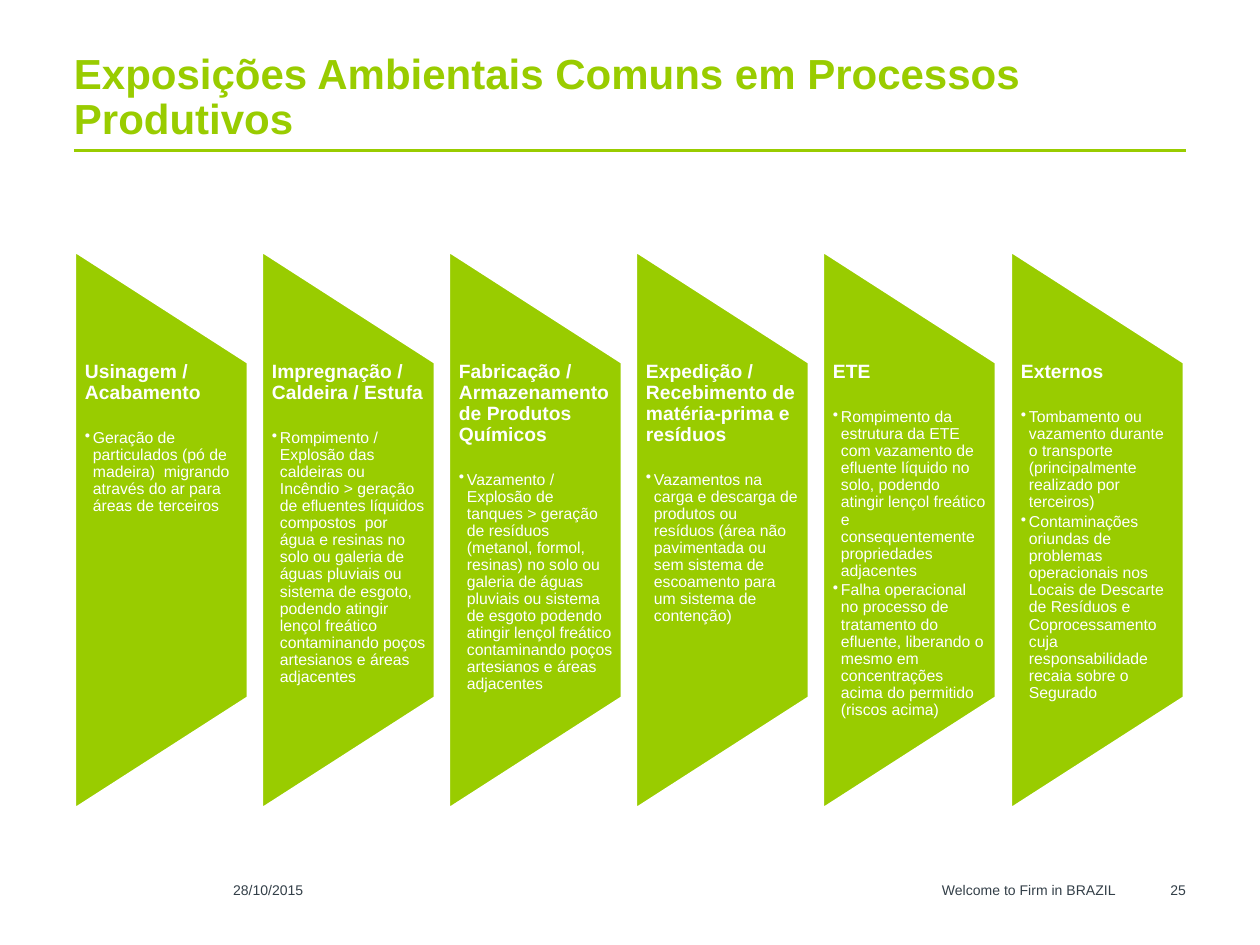
from dataclasses import dataclass

import lxml.etree
import pptx
import pptx.dml.color
import pptx.enum.shapes
import pptx.enum.text
import pptx.oxml.ns
import pptx.util

EMU_PER_PX = 914400 // 126
FONT = "Arial"
GREEN, WHITE, SLATE = "99CC00", "FFFFFF", "333F48"
LEFT, RIGHT = pptx.enum.text.PP_ALIGN.LEFT, pptx.enum.text.PP_ALIGN.RIGHT
TOP, BOTTOM = pptx.enum.text.MSO_ANCHOR.TOP, pptx.enum.text.MSO_ANCHOR.BOTTOM

MARGIN, CONTENT_WIDTH = 74, 1112
BAND_WIDTH, BAND_HEIGHT, BAND_MIDDLE = 174, 559, 530
BODY_TOP, BODY_HEIGHT, BODY_INSET = 362, 336, 10
BULLET_INDENT = 8


@dataclass(frozen=True)
class Box:
    left: int
    top: int
    width: int
    height: int


@dataclass(frozen=True)
class Process:
    heading: str
    exposures: tuple[str, ...]


@dataclass(frozen=True)
class FooterItem:
    text: str
    box: Box
    align: pptx.enum.text.PP_ALIGN


PROCESSES = (
    Process("Usinagem / Acabamento", (
        "Geração de particulados (pó de madeira)  migrando através do ar para áreas de terceiros",
    )),
    Process("Impregnação / Caldeira / Estufa", (
        "Rompimento / Explosão das caldeiras ou Incêndio > geração de efluentes líquidos "
        "compostos  por água e resinas no solo ou galeria de águas pluviais ou sistema de "
        "esgoto, podendo atingir lençol freático contaminando poços artesianos e áreas adjacentes",
    )),
    Process("Fabricação / Armazenamento de Produtos Químicos", (
        "Vazamento / Explosão de tanques > geração de resíduos (metanol, formol, resinas) no "
        "solo ou galeria de águas pluviais ou sistema de esgoto podendo atingir lençol freático "
        "contaminando poços artesianos e áreas adjacentes",
    )),
    Process("Expedição / Recebimento de matéria-prima e resíduos", (
        "Vazamentos na carga e descarga de produtos ou resíduos (área não pavimentada ou sem "
        "sistema de escoamento para um sistema de contenção)",
    )),
    Process("ETE", (
        "Rompimento da estrutura da ETE com vazamento de efluente líquido no solo, podendo "
        "atingir lençol freático e consequentemente propriedades adjacentes",
        "Falha operacional no processo de tratamento do efluente, liberando o mesmo em "
        "concentrações acima do permitido (riscos acima)",
    )),
    Process("Externos", (
        "Tombamento ou vazamento durante o transporte (principalmente realizado por terceiros)",
        "Contaminações oriundas de problemas operacionais nos Locais de Descarte de Resíduos e "
        "Coprocessamento cuja responsabilidade recaia sobre o Segurado",
    )),
)

FOOTER = (
    FooterItem("28/10/2015", Box(233, 882, 198, 25), LEFT),
    FooterItem("Welcome to Firm in BRAZIL", Box(471, 882, 645, 25), RIGHT),
    FooterItem("25", Box(1152, 882, 34, 25), RIGHT),
)


def px(length: int) -> pptx.util.Emu:
    return pptx.util.Emu(length * EMU_PER_PX)


def rgb(colour: str) -> pptx.dml.color.RGBColor:
    return pptx.dml.color.RGBColor.from_string(colour)


def add_frame(slide, box: Box, inset: int = 0, anchor=TOP):
    """Add a wrapping text box with side insets only and return its text frame."""
    shape = slide.shapes.add_textbox(px(box.left), px(box.top), px(box.width), px(box.height))
    frame = shape.text_frame
    frame.word_wrap = True
    frame.vertical_anchor = anchor
    frame.margin_left = frame.margin_right = px(inset)
    frame.margin_top = frame.margin_bottom = 0
    return frame


def write(paragraph, text: str, size: int, colour: str, bold: bool = False,
          align=LEFT, spacing: float = 1.0) -> None:
    paragraph.text = text
    paragraph.alignment = align
    paragraph.line_spacing = spacing
    paragraph.font.name = FONT
    paragraph.font.size = pptx.util.Pt(size)
    paragraph.font.bold = bold
    paragraph.font.color.rgb = rgb(colour)


def add_bullet(paragraph) -> None:
    properties = paragraph._p.get_or_add_pPr()
    properties.set("marL", str(px(BULLET_INDENT)))
    properties.set("indent", str(-px(BULLET_INDENT)))
    bullet = lxml.etree.SubElement(properties, pptx.oxml.ns.qn("a:buChar"))
    bullet.set("char", "•")


def draw_title(slide) -> None:
    frame = add_frame(slide, Box(MARGIN, 49, CONTENT_WIDTH, 95), anchor=BOTTOM)
    write(frame.paragraphs[0], "Exposições Ambientais Comuns em Processos Produtivos",
          24, GREEN, bold=True, spacing=0.9)
    rule = slide.shapes.add_connector(
        pptx.enum.shapes.MSO_CONNECTOR.STRAIGHT,
        px(MARGIN), px(151), px(MARGIN + CONTENT_WIDTH), px(151))
    rule.line.color.rgb = rgb(GREEN)
    rule.line.width = pptx.util.Pt(1.75)
    lxml.etree.SubElement(rule._element.spPr, pptx.oxml.ns.qn("a:effectLst"))


def draw_process(slide, process: Process, left: int) -> None:
    # The band is laid out lying down, then turned upright about its centre.
    band = slide.shapes.add_shape(
        pptx.enum.shapes.MSO_SHAPE.FLOWCHART_MANUAL_OPERATION,
        px(left + (BAND_WIDTH - BAND_HEIGHT) // 2), px(BAND_MIDDLE - BAND_WIDTH // 2),
        px(BAND_HEIGHT), px(BAND_WIDTH))
    band.rotation = 270
    band.shadow.inherit = False
    band.fill.solid()
    band.fill.fore_color.rgb = rgb(GREEN)
    band.line.color.rgb = rgb(WHITE)
    band.line.width = pptx.util.Pt(2)

    frame = add_frame(slide, Box(left, BODY_TOP, BAND_WIDTH, BODY_HEIGHT), BODY_INSET)
    heading = frame.paragraphs[0]
    write(heading, process.heading, 11, WHITE, bold=True, spacing=0.9)
    heading.space_after = pptx.util.Pt(15)
    for exposure in process.exposures:
        item = frame.add_paragraph()
        add_bullet(item)
        write(item, exposure, 9, WHITE, spacing=0.9)
        item.space_after = pptx.util.Pt(1.5)


def main() -> None:
    presentation = pptx.Presentation()
    presentation.slide_width, presentation.slide_height = px(1260), px(945)
    slide = presentation.slides.add_slide(presentation.slide_layouts[6])

    draw_title(slide)
    for item in FOOTER:
        frame = add_frame(slide, item.box)
        write(frame.paragraphs[0], item.text, 8, SLATE, align=item.align)
    gaps = len(PROCESSES) - 1
    for index, process in enumerate(PROCESSES):
        draw_process(slide, process,
                     MARGIN + 1 + index * (CONTENT_WIDTH - BAND_WIDTH - 2) // gaps)

    presentation.save("out.pptx")


if __name__ == "__main__":
    main()
